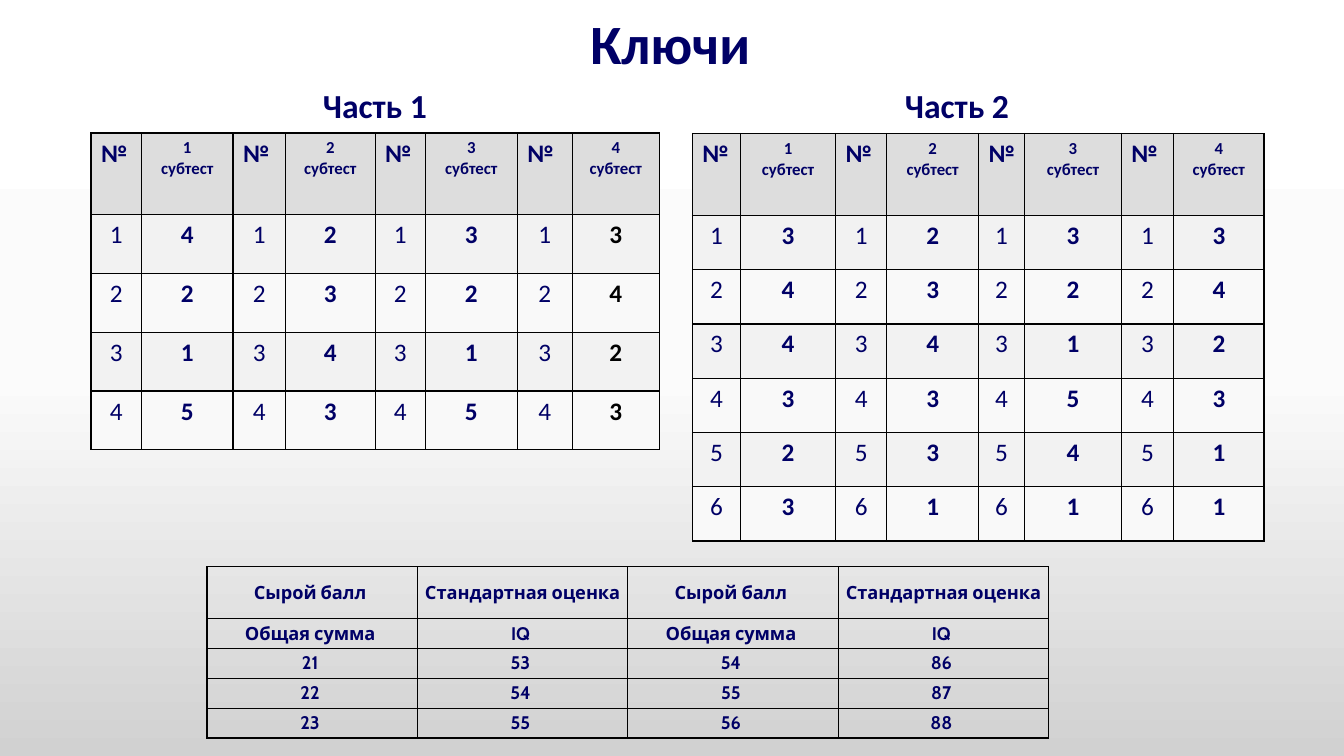
from dataclasses import dataclass
from pptx import Presentation
from pptx.dml.color import RGBColor
from pptx.enum.text import MSO_ANCHOR, PP_ALIGN
from pptx.oxml import parse_xml
from pptx.util import Pt

DRAWING = "http://schemas.openxmlformats.org/drawingml/2006/main"
SLIDE = "http://schemas.openxmlformats.org/presentationml/2006/main"


@dataclass(frozen=True)
class Theme:
    navy: str = "000066"
    black: str = "000000"
    head: str = "DDDDDD"
    bands: tuple = ("F2F2F2", "F9F9F9")
    back: tuple = ((0, "FFFFFF"), (50, "FBFBFB"), (100, "D1D1D1"))
    font: str = "Calibri"
    score: str = "Cabin"
    title: float = 39.6
    section: float = 24
    body: float = 18
    small: float = 12
    norm: float = 13
    line: float = 1


THEME = Theme()

FIRST = ["4233", "2324", "1412", "5353"]
SECOND = ["3233", "4324", "4412", "3353", "2341", "3111"]
NORMS = [
    ["Сырой балл ", "Стандартная оценка "] * 2,
    ["Общая сумма ", "IQ "] * 2,
    ["21 ", "53 ", "54 ", "86 "],
    ["22 ", "54 ", "55 ", "87 "],
    ["23 ", "55 ", "56 ", "88 "],
]


def paint(slide):
    stops = "".join(
        f'<a:gs pos="{pos * 1000}"><a:srgbClr val="{color}"/></a:gs>'
        for pos, color in THEME.back
    )
    slide.element.cSld.insert(0, parse_xml(
        f'<p:bg xmlns:p="{SLIDE}" xmlns:a="{DRAWING}"><p:bgPr>'
        f'<a:gradFill rotWithShape="1"><a:gsLst>{stops}</a:gsLst>'
        '<a:lin ang="5400000" scaled="0"/></a:gradFill>'
        '<a:effectLst/></p:bgPr></p:bg>'
    ))


def write(para, text, size, font=THEME.font, color=THEME.navy, bold=True,
          align=PP_ALIGN.CENTER):
    para.alignment = align
    run = para.add_run()
    run.text = text
    run.font.size = Pt(size)
    run.font.name = font
    run.font.bold = bold
    run.font.color.rgb = RGBColor.from_string(color)


def label(slide, box, text, size, anchor):
    frame = slide.shapes.add_textbox(*map(Pt, box)).text_frame
    frame.word_wrap = True
    frame.vertical_anchor = anchor
    para = frame.paragraphs[0]
    para.line_spacing = 0.9
    write(para, text, size)


def border(cell):
    props = cell._tc.get_or_add_tcPr()
    for place, side in enumerate(("lnL", "lnR", "lnT", "lnB")):
        props.insert(place, parse_xml(
            f'<a:{side} xmlns:a="{DRAWING}" w="{Pt(THEME.line)}">'
            f'<a:solidFill><a:srgbClr val="{THEME.black}"/></a:solidFill>'
            f'</a:{side}>'
        ))


def fill(cell, color):
    cell.fill.solid()
    cell.fill.fore_color.rgb = RGBColor.from_string(color)


def grid(slide, left, top, widths, heights):
    table = slide.shapes.add_table(
        len(heights), len(widths), Pt(left), Pt(top),
        Pt(sum(widths)), Pt(sum(heights)),
    ).table
    table.first_row = False
    table.horz_banding = False
    for column, width in zip(table.columns, widths):
        column.width = Pt(width)
    for row, height in zip(table.rows, heights):
        row.height = Pt(height)
    for cell in table.iter_cells():
        border(cell)
    return table


def keys(slide, left, top, widths, height, answers, last):
    table = grid(slide, left, top, widths, [58.4] + [height] * len(answers))
    for test in range(4):
        number, name = table.cell(0, 2 * test), table.cell(0, 2 * test + 1)
        fill(number, THEME.head)
        fill(name, THEME.head)
        write(number.text_frame.paragraphs[0], "№", THEME.body,
              align=PP_ALIGN.LEFT)
        write(name.text_frame.paragraphs[0], str(test + 1), THEME.small)
        write(name.text_frame.add_paragraph(), "субтест", THEME.small)
        for row, line in enumerate(answers, 1):
            color = last if test == 3 else THEME.navy
            pair = ((str(row), THEME.navy, False), (line[test], color, True))
            for side, (text, tint, bold) in enumerate(pair):
                cell = table.cell(row, 2 * test + side)
                fill(cell, THEME.bands[(row - 1) % 2])
                write(cell.text_frame.paragraphs[0], text, THEME.body,
                      color=tint, bold=bold)


def norms(slide, left, top):
    table = grid(slide, left, top, [150.3] * 4, [37.2] + [21.3] * 4)
    for row, line in enumerate(NORMS):
        for column, text in enumerate(line):
            cell = table.cell(row, column)
            cell.fill.background()
            cell.vertical_anchor = MSO_ANCHOR.MIDDLE
            cell.margin_left = cell.margin_right = Pt(5)
            cell.margin_top = cell.margin_bottom = Pt(2.8)
            write(cell.text_frame.paragraphs[0], text, THEME.norm,
                  font=THEME.score)


def main():
    deck = Presentation()
    deck.slide_width, deck.slide_height = Pt(960), Pt(540)
    slide = deck.slides.add_slide(deck.slide_layouts[6])
    paint(slide)
    label(slide, (64.8, 9.4, 828, 48.2), "Ключи", THEME.title,
          MSO_ANCHOR.MIDDLE)
    label(slide, (64.8, 59.8, 406, 33.8), "Часть 1", THEME.section,
          MSO_ANCHOR.BOTTOM)
    keys(slide, 65, 95, [36, 65.5, 37.5, 64, 36, 65.5, 39.5, 62], 42,
         FIRST, THEME.black)
    label(slide, (471.6, 58.3, 424, 35.3), "Часть 2", THEME.section,
          MSO_ANCHOR.BOTTOM)
    keys(slide, 494.6, 95.4, [34.5, 67.7, 36.7, 65.5, 33, 69, 37.5, 64.5],
         38.8, SECOND, THEME.navy)
    norms(slide, 147.8, 404.8)
    deck.save("out.pptx")


if __name__ == "__main__":
    main()
